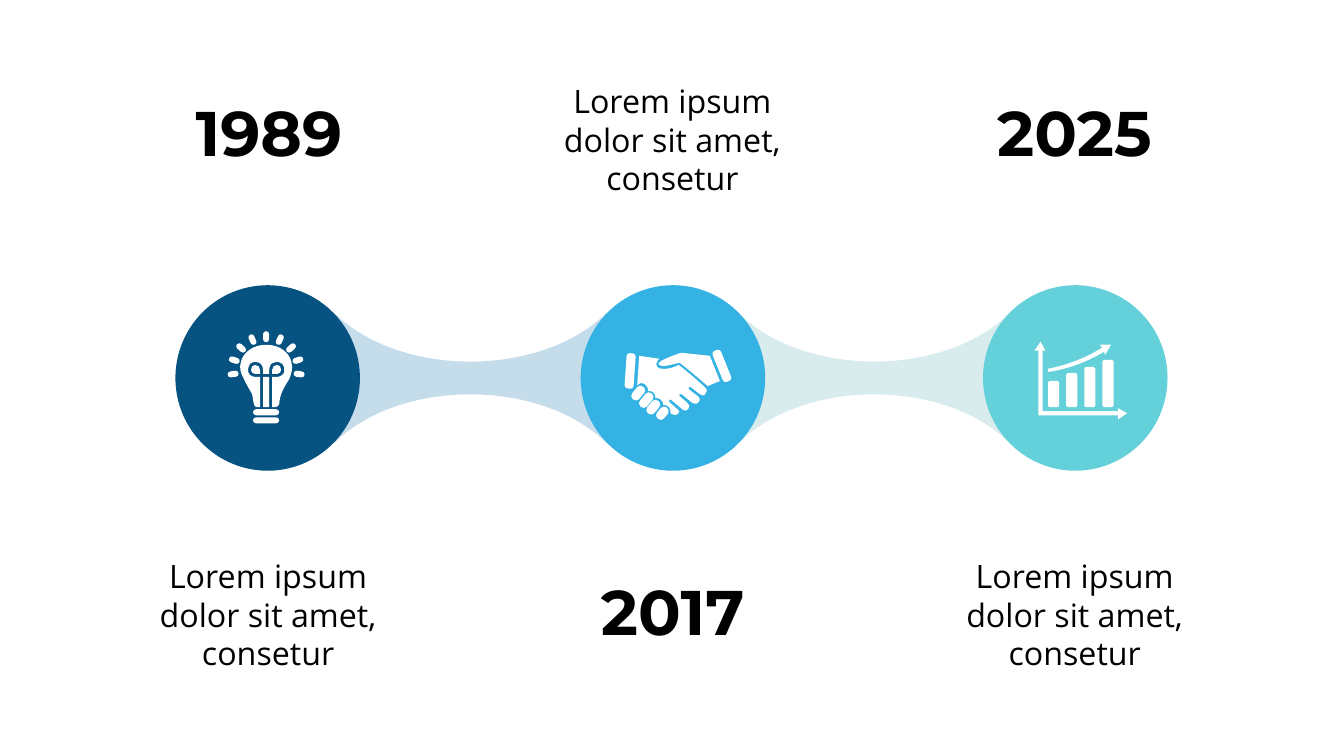
import math
from dataclasses import dataclass
from lxml import etree
from pptx import Presentation
from pptx.dml.color import RGBColor
from pptx.enum import shapes, text
from pptx.oxml import ns
from pptx.util import Inches, Pt


@dataclass(frozen=True)
class Theme:
    ink: str = "000000"
    white: str = "FFFFFF"
    navy: str = "065280"
    blue: str = "34B2E3"
    aqua: str = "64D1DA"
    blue_link: str = "C5DCEB"
    aqua_link: str = "D8ECED"
    body_font: str = "Open Sans"
    year_font: str = "Montserrat"
    body_size: int = 23
    year_size: int = 45


THEME = Theme()
UNITS = 1000
BULB = [
    (.63, .3), (.61, .21, .52, .13, .38, .13), (.25, .13, .15, .21, .13, .3),
    (.11, .36, .13, .42, .16, .47), (.18, .52, .21, .56, .24, .62),
    (.25, .65, .25, .69, .26, .72), (.26, .74, .27, .75, .3, .75),
    (.32, .75), (.32, .45), (.27, .45), (.25, .45, .24, .44, .22, .43),
    (.21, .42, .2, .4, .2, .38), (.2, .36, .21, .34, .22, .32),
    (.24, .31, .25, .3, .27, .3), (.32, .3, .35, .33, .35, .38),
    (.35, .42), (.41, .42), (.41, .38), (.41, .36, .42, .34, .43, .32),
    (.45, .31, .47, .3, .49, .3), (.51, .3, .52, .31, .54, .32),
    (.56, .34, .56, .36, .56, .38), (.56, .4, .56, .42, .54, .43),
    (.52, .44, .51, .45, .49, .45), (.44, .45), (.44, .75), (.46, .75),
    (.49, .75, .5, .74, .51, .72), (.51, .69, .52, .65, .53, .62),
    (.55, .56, .58, .52, .61, .47), (.63, .42, .65, .36, .63, .3)]
STEM = [(.35, .45), (.41, .45), (.41, .75), (.35, .75)]
LOOP = [(.27, .33), (.25, .33, .23, .35, .23, .38), (.23, .4, .25, .42, .27, .42),
        (.32, .42), (.32, .38), (.32, .35, .3, .33, .27, .33)]
SLEEVE = [(.85, .07), (.95, .32), (.83, .37), (.76, .31, .56, .14, .55, .14),
          (.53, .14, .47, .16, .46, .16), (.46, .16, .43, .17, .39, .17),
          (.37, .17, .36, .17, .35, .16), (.34, .15), (.35, .14, .36, .12, .37, .12),
          (.42, .09, .56, .04, .57, .04)]
PALM = [(.81, .44), (.82, .43, .83, .41, .81, .39), (.79, .37),
        (.69, .28, .57, .18, .54, .16), (.53, .17, .5, .18, .47, .19),
        (.47, .19, .43, .2, .39, .2), (.34, .2, .32, .18, .32, .15),
        (.32, .13, .34, .11, .35, .1), (.15, .07), (.13, .36),
        (.15, .35, .16, .34, .17, .34), (.21, .34, .24, .38, .24, .42),
        (.28, .41, .32, .45, .31, .49), (.35, .48, .39, .52, .39, .56),
        (.43, .55, .47, .59, .46, .64), (.48, .65),
        (.49, .66, .52, .66, .53, .65), (.55, .63, .55, .62, .54, .61),
        (.45, .53), (.43, .52, .45, .49, .47, .51), (.59, .61),
        (.61, .62, .63, .61, .64, .59), (.66, .57, .64, .55, .62, .53),
        (.55, .47), (.54, .46, .55, .44, .57, .45), (.68, .54),
        (.7, .56, .73, .54, .74, .53), (.76, .5, .75, .49, .73, .47),
        (.64, .4), (.63, .38, .65, .37, .66, .38), (.75, .45),
        (.77, .47, .8, .47, .81, .44)]
AXES = [(.92, .71), (.83, .66), (.83, .69), (.08, .69), (.08, .09), (.11, .09),
        (.06, 0), (0, .09), (.04, .09), (.04, .73), (.83, .73), (.83, .77)]
TREND = [(.14, .3), (.34, .27, .52, .2, .69, .1), (.7, .13), (.76, .03), (.65, .03),
         (.67, .06), (.51, .16, .33, .23, .13, .27)]


def rgb(color):
    return RGBColor.from_string(color)


def paint(shape, color):
    shape.shadow.inherit = False
    shape.fill.solid()
    shape.fill.fore_color.rgb = rgb(color)
    shape.line.fill.background()


def mirror(contour, axis):
    return [tuple(2 * axis - value if index % 2 == 0 else value
                  for index, value in enumerate(step)) for step in contour]


def pill(center_x, center_y, width, height, angle=0, radius=.03):
    x, y, r, k = width / 2, height / 2, radius, radius * .45
    steps = [(r - x, -y), (x - r, -y), (x - k, -y, x, k - y, x, r - y),
             (x, y - r), (x, y - k, x - k, y, x - r, y),
             (r - x, y), (k - x, y, -x, y - k, -x, y - r),
             (-x, r - y), (-x, k - y, k - x, -y, r - x, -y)]
    cos, sin = math.cos(math.radians(angle)), math.sin(math.radians(angle))
    return [tuple(value for a, b in zip(step[::2], step[1::2])
                  for value in (center_x + a * cos - b * sin, center_y + a * sin + b * cos))
            for step in steps]


def add_outline(page, left, top, width, height, contours, color=THEME.white):
    right, bottom = width * UNITS, height * UNITS
    builder = page.shapes.build_freeform(0, 0, scale=Inches(1) / UNITS)
    builder.add_line_segments([(right, 0), (right, bottom), (0, bottom)])
    shape = builder.convert_to_shape(Inches(left), Inches(top))
    outline = shape.element.find(".//" + ns.qn("a:path"))
    for child in list(outline):
        outline.remove(child)
    for contour in contours:
        for index, step in enumerate(contour):
            kind = "moveTo" if index == 0 else "lnTo" if len(step) == 2 else "cubicBezTo"
            segment = etree.SubElement(outline, ns.qn("a:" + kind))
            for x, y in zip(step[::2], step[1::2]):
                etree.SubElement(segment, ns.qn("a:pt"),
                                 x=str(round(x * UNITS)), y=str(round(y * UNITS)))
        etree.SubElement(outline, ns.qn("a:close"))
    paint(shape, color)


def draw_link(page, left, top, width, height, color):
    bend = .65
    contour = [(width, height), (width - bend, bend, bend, bend, 0, height),
               (0, 0), (bend, bend, width - bend, bend, width, 0)]
    add_outline(page, left, top, width, height, [contour], color)


def draw_bulb(page, left, top):
    axis = .38
    contours = [BULB, STEM, LOOP, mirror(LOOP, axis)]
    contours += [pill(axis, y, .26, .06) for y in (.8, .88)]
    for ray in range(-4, 5):
        angle = 24.3 * ray
        turn = math.radians(angle)
        contours.append(pill(axis + .33 * math.sin(turn), axis - .33 * math.cos(turn),
                             .06, .11, angle))
    add_outline(page, left, top, .76, .91, contours)


def draw_handshake(page, left, top):
    cuffs = [pill(.06, .22, .09, .35, 4), pill(.97, .17, .09, .33, -22)]
    fingers = [pill(x, y, length, .09, -50, .04) for x, y, length in
               ((.14, .44, .16), (.22, .51, .17), (.29, .58, .16), (.38, .64, .14))]
    add_outline(page, left, top, 1.07, .71, [SLEEVE, PALM] + cuffs + fingers)


def draw_growth(page, left, top):
    base, step, width = .65, .18, .11
    bars = [pill(.19 + step * index, base - height / 2, width, height, radius=.02)
            for index, height in enumerate((.26, .34, .4, .47))]
    add_outline(page, left, top, .92, .77, bars + [TREND, AXES])


def draw_disc(page, left, top, color):
    disc = page.shapes.add_shape(shapes.MSO_SHAPE.OVAL, Inches(left), Inches(top),
                                 Inches(1.83), Inches(1.84))
    paint(disc, color)


def add_text(page, left, top, width, height, words, font, size, bold=False):
    box = page.shapes.add_textbox(Inches(left), Inches(top), Inches(width), Inches(height))
    frame = box.text_frame
    frame.auto_size = text.MSO_AUTO_SIZE.SHAPE_TO_FIT_TEXT
    para = frame.paragraphs[0]
    para.text = words
    para.font.name = font
    para.font.size = Pt(size)
    para.font.bold = bold
    para.font.color.rgb = rgb(THEME.ink)
    return frame


def draw_year(page, left, top, width, year):
    frame = add_text(page, left, top, width, .93, year,
                     THEME.year_font, THEME.year_size, True)
    frame.word_wrap = False
    frame.margin_left = frame.margin_right = frame.margin_top = frame.margin_bottom = 0


def draw_summary(page, left, top):
    frame = add_text(page, left, top, 2.52, 1.26, "Lorem ipsum dolor sit amet, consetur",
                     THEME.body_font, THEME.body_size)
    frame.word_wrap = True
    frame.paragraphs[0].alignment = text.PP_ALIGN.CENTER


def draw_timeline(page):
    draw_summary(page, 5.41, .76)
    for left, top, width, year in ((1.94, .93, 1.85, "1989"), (5.96, 5.68, 1.83, "2017"),
                                   (9.89, .93, 1.97, "2025")):
        draw_year(page, left, top, width, year)
    draw_link(page, 7.32, 3.1, 2.7, 1.3, THEME.aqua_link)
    draw_link(page, 3.31, 3.1, 2.71, 1.3, THEME.blue_link)
    for left, color in ((9.75, THEME.aqua), (5.76, THEME.blue), (1.74, THEME.navy)):
        draw_disc(page, left, 2.83, color)
    draw_bulb(page, 2.26, 3.29)
    draw_handshake(page, 6.19, 3.46)
    draw_growth(page, 10.26, 3.39)
    for left in (1.4, 9.4):
        draw_summary(page, left, 5.47)


def main():
    deck = Presentation()
    deck.slide_width, deck.slide_height = Inches(13.33), Inches(7.5)
    page = deck.slides.add_slide(deck.slide_layouts[6])
    draw_timeline(page)
    deck.save("out.pptx")


if __name__ == "__main__":
    main()
